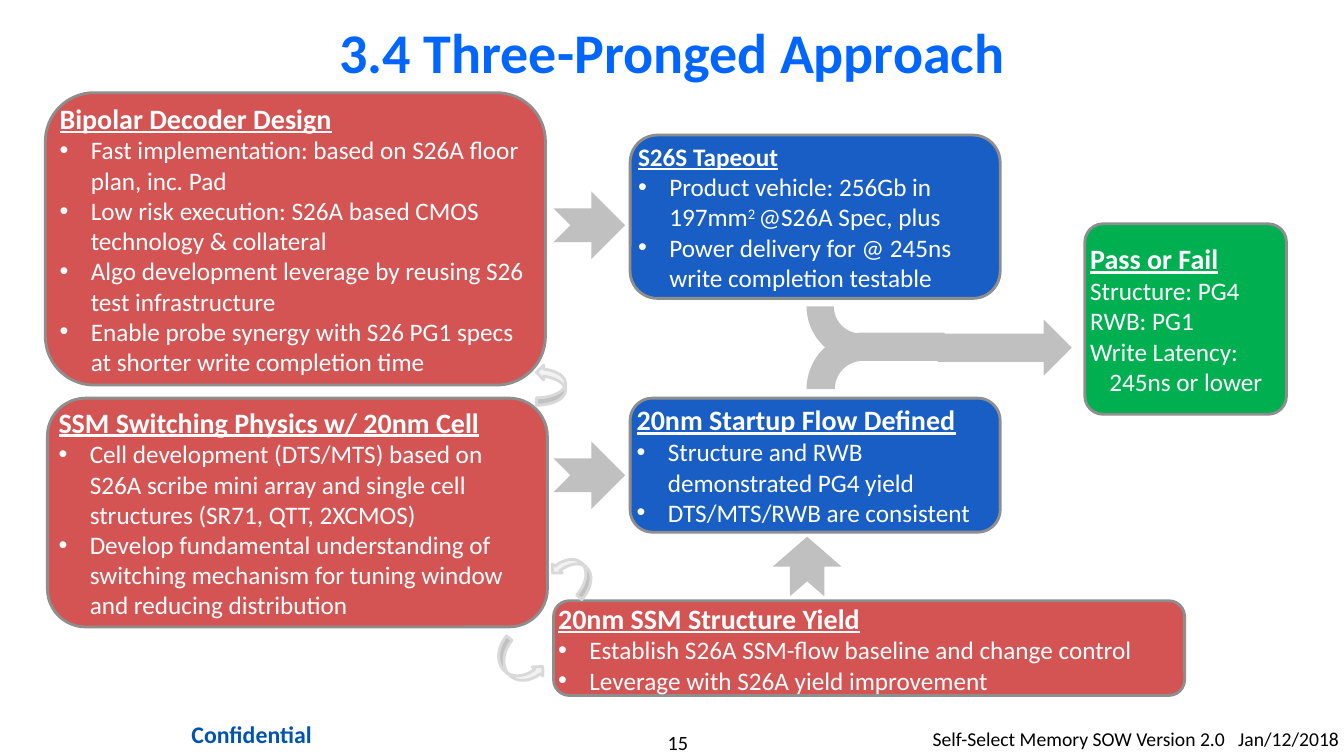
from dataclasses import dataclass

from lxml.etree import SubElement
from pptx import Presentation
from pptx.dml.color import RGBColor
from pptx.enum.shapes import MSO_SHAPE as Preset
from pptx.enum.text import MSO_ANCHOR as Anchor, PP_ALIGN as Align
from pptx.oxml.ns import qn
from pptx.util import Inches, Pt


@dataclass(frozen=True)
class Theme:
    font: str = "Calibri"
    title: str = "0066FF"
    confidential: str = "0054B0"
    ink: str = "000000"
    white: str = "FFFFFF"
    red: str = "C00000"
    blue: str = "004DBF"
    green: str = "00B050"
    border: str = "8E8E8E"
    flow: str = "C0C0C0"
    loop: str = "F2F2F2"
    loop_edge: str = "D9D9D9"
    title_size: float = 40
    heading_size: float = 20
    body_size: float = 18
    confidential_size: float = 17
    page_size: float = 14.5
    version_size: float = 14
    line_width: float = 2


class ApproachSlide:
    def __init__(self, slide, theme):
        self.slide = slide
        self.theme = theme

    def add_text(self, paragraph, text, size, color, bold=False, underline=False, raised=False):
        run = paragraph.add_run()
        run.text = text
        font = run.font
        font.name, font.size = self.theme.font, Pt(size)
        font.bold, font.underline = bold, underline
        font.color.rgb = RGBColor.from_string(color)
        if raised:
            run._r.get_or_add_rPr().set("baseline", "30000")

    def frame(self, shape, anchor, margins=(0, 0)):
        frame = shape.text_frame
        frame.word_wrap = True
        frame.vertical_anchor = anchor
        frame.margin_left = frame.margin_right = Inches(margins[0])
        frame.margin_top = frame.margin_bottom = Inches(margins[1])
        return frame

    def label(self, place, text, size, color, bold=False, align=Align.CENTER,
              anchor=Anchor.TOP, margins=(0, 0)):
        box = self.slide.shapes.add_textbox(*map(Inches, place))
        paragraph = self.frame(box, anchor, margins).paragraphs[0]
        paragraph.alignment = align
        self.add_text(paragraph, text, size, color, bold)

    def preset(self, kind, place, fill, edge=None, alpha=None, adjust=(), turn=0, flip=""):
        shape = self.slide.shapes.add_shape(kind, *map(Inches, place))
        shape.shadow.inherit = False
        shape.rotation = turn
        shape.fill.solid()
        shape.fill.fore_color.rgb = RGBColor.from_string(fill)
        if alpha:
            color = shape._element.spPr.find(qn("a:solidFill"))[0]
            SubElement(color, qn("a:alpha")).set("val", str(alpha * 1000))
        if edge:
            shape.line.color.rgb = RGBColor.from_string(edge)
            shape.line.width = Pt(self.theme.line_width)
        else:
            shape.line.fill.background()
        for index, value in enumerate(adjust):
            shape.adjustments[index] = value
        for axis in flip:
            shape._element.spPr.find(qn("a:xfrm")).set(f"flip{axis}", "1")
        return shape

    def indent(self, paragraph, inches, bullet=False):
        properties = paragraph._p.get_or_add_pPr()
        properties.set("marL", str(Inches(inches)))
        properties.set("indent", str(-Inches(inches)))
        if bullet:
            SubElement(properties, qn("a:buFont")).set("typeface", "Arial")
            SubElement(properties, qn("a:buChar")).set("char", "•")
        paragraph.alignment = Align.LEFT

    def card(self, place, fill, heading, items, alpha=None, bullets=True,
             heading_size=None, adjust=()):
        theme = self.theme
        shape = self.preset(Preset.ROUNDED_RECTANGLE, place, fill, theme.border, alpha, adjust)
        frame = self.frame(shape, Anchor.MIDDLE)
        self.indent(frame.paragraphs[0], 0.19)
        self.add_text(frame.paragraphs[0], heading, heading_size or theme.heading_size,
                      theme.white, bold=True, underline=True)
        for item in items:
            paragraph = frame.add_paragraph()
            self.indent(paragraph, 0.31 if bullets else 0.19, bullets)
            for part, text in enumerate([item] if isinstance(item, str) else item):
                self.add_text(paragraph, text, theme.body_size, theme.white, raised=part == 1)

    def flow_arrow(self, place, turn=0, flip=""):
        return self.preset(Preset.NOTCHED_RIGHT_ARROW, place, self.theme.flow, turn=turn, flip=flip)

    def merge_arrow(self):
        bend = (0.5, 0.25, 0.25, 1)
        parts = [self.flow_arrow((9.3, 3.17, 1.33, 0.56))]
        for place, flip in (((8, 3.3, 1.5, 0.56), ""), ((8, 3.04, 1.5, 0.54), "V")):
            parts.append(self.preset(Preset.BENT_ARROW, place, self.theme.flow,
                                     adjust=bend, flip=flip))
        self.slide.shapes.add_group_shape(parts)

    def loop_arrow(self, kind, place, turn=0, flip=""):
        self.preset(kind, place, self.theme.loop, self.theme.loop_edge, turn=turn, flip=flip)


def main():
    deck = Presentation()
    deck.slide_width, deck.slide_height = Inches(13.33), Inches(7.5)
    theme = Theme()
    page = ApproachSlide(deck.slides.add_slide(deck.slide_layouts[6]), theme)

    page.label((5.56, 7.24, 2.33, 0.24), "15", theme.page_size, theme.ink)
    page.label((1.55, 7.08, 1.89, 0.41), "Confidential", theme.confidential_size,
               theme.confidential, bold=True, margins=(0.12, 0.06))
    page.label((9.25, 7.16, 4.08, 0.34), "Self-Select Memory SOW Version 2.0   Jan/12/2018",
               theme.version_size, theme.ink, align=Align.LEFT, margins=(0, 0.05))
    page.label((1, 0.17, 11.33, 0.67), "3.4 Three-Pronged Approach", theme.title_size,
               theme.title, bold=True, anchor=Anchor.MIDDLE, margins=(0.1, 0.05))

    prongs = [
        ((0.45, 0.92, 4.96, 2.9), "Bipolar Decoder Design", [
            "Fast implementation: based on S26A floor plan, inc. Pad",
            "Low risk execution: S26A based CMOS technology & collateral",
            "Algo development leverage by reusing S26 test infrastructure",
            "Enable probe synergy with S26 PG1 specs at shorter write completion time"]),
        ((0.47, 3.95, 4.96, 2.27), "SSM Switching Physics w/ 20nm Cell", [
            "Cell development (DTS/MTS) based on S26A scribe mini array and single cell "
            "structures (SR71, QTT, 2XCMOS)",
            "Develop fundamental understanding of switching mechanism for tuning window "
            "and reducing distribution"]),
        ((5.49, 5.96, 6.26, 0.94), "20nm SSM Structure Yield", [
            "Establish S26A SSM-flow baseline and change control",
            "Leverage with S26A yield improvement"]),
    ]
    for place, heading, items in prongs:
        page.card(place, theme.red, heading, items, alpha=67)

    page.card((6.25, 3.95, 3.67, 1.33), theme.blue, "20nm Startup Flow Defined", [
        "Structure and RWB demonstrated PG4 yield",
        "DTS/MTS/RWB are consistent"], alpha=90)
    page.card((6.25, 1.34, 3.67, 1.62), theme.blue, "S26S Tapeout", [
        ("Product vehicle: 256Gb in 197mm", "2 ", "@S26A Spec, plus"),
        "Power delivery for @ 245ns write completion testable"],
        alpha=90, heading_size=theme.body_size)

    for top in (4.38, 1.9):
        page.flow_arrow((5.49, top, 0.71, 0.67))
    page.flow_arrow((7.71, 5.28, 0.59, 0.68), turn=270, flip="V")

    page.card((10.76, 2.22, 2, 1.89), theme.green, "Pass or Fail", [
        "Structure: PG4", "RWB: PG1", "Write Latency: 245ns or lower"],
        bullets=False, adjust=(0.096,))
    page.merge_arrow()

    page.loop_arrow(Preset.CURVED_UP_ARROW, (4.87, 6.45, 0.54, 0.28), turn=40.4)
    page.loop_arrow(Preset.CURVED_UP_ARROW, (5.46, 5.56, 0.46, 0.27), turn=42.2, flip="HV")
    page.loop_arrow(Preset.CURVED_RIGHT_ARROW, (5.32, 3.62, 0.29, 0.4), flip="HV")

    deck.save("out.pptx")


if __name__ == "__main__":
    main()
